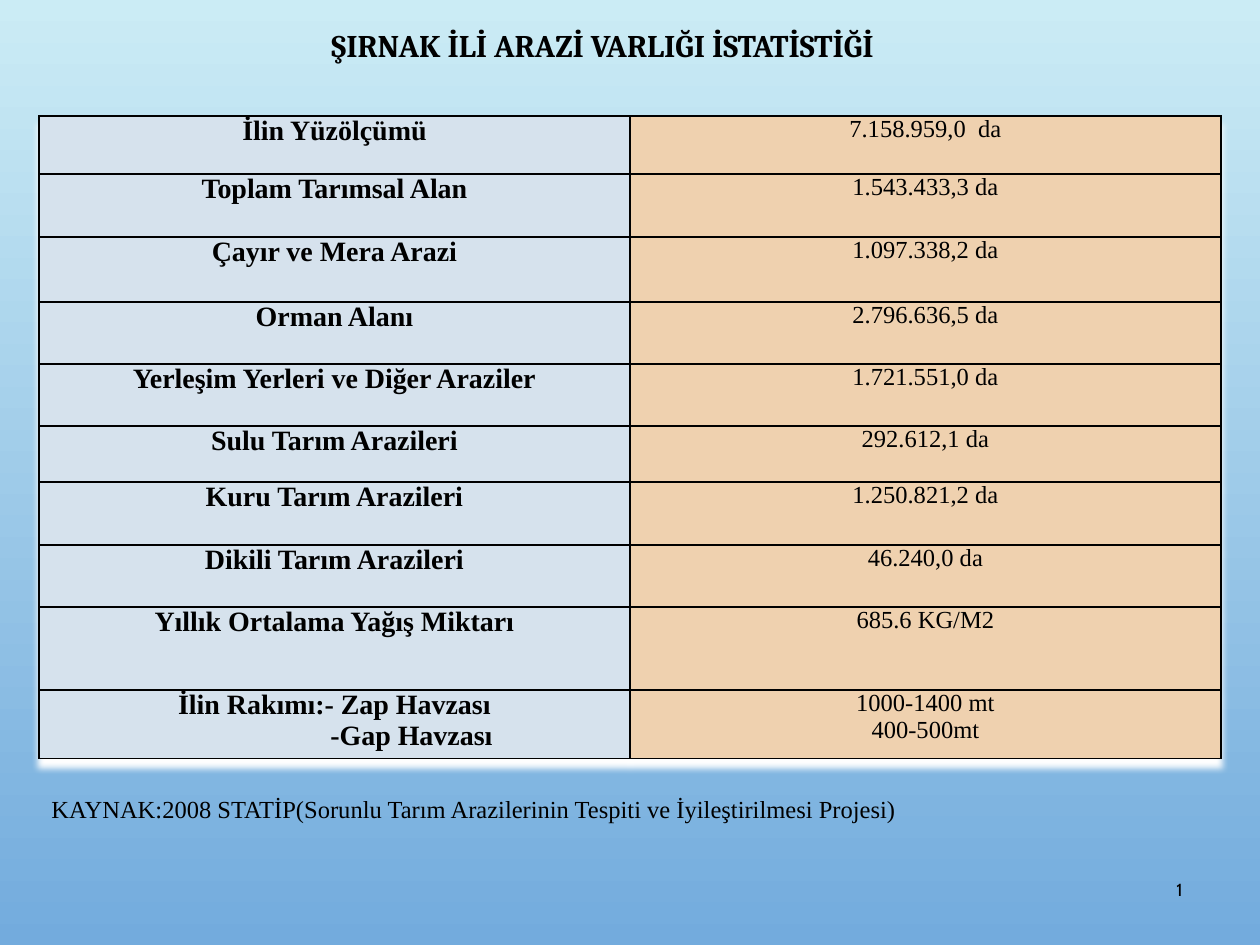
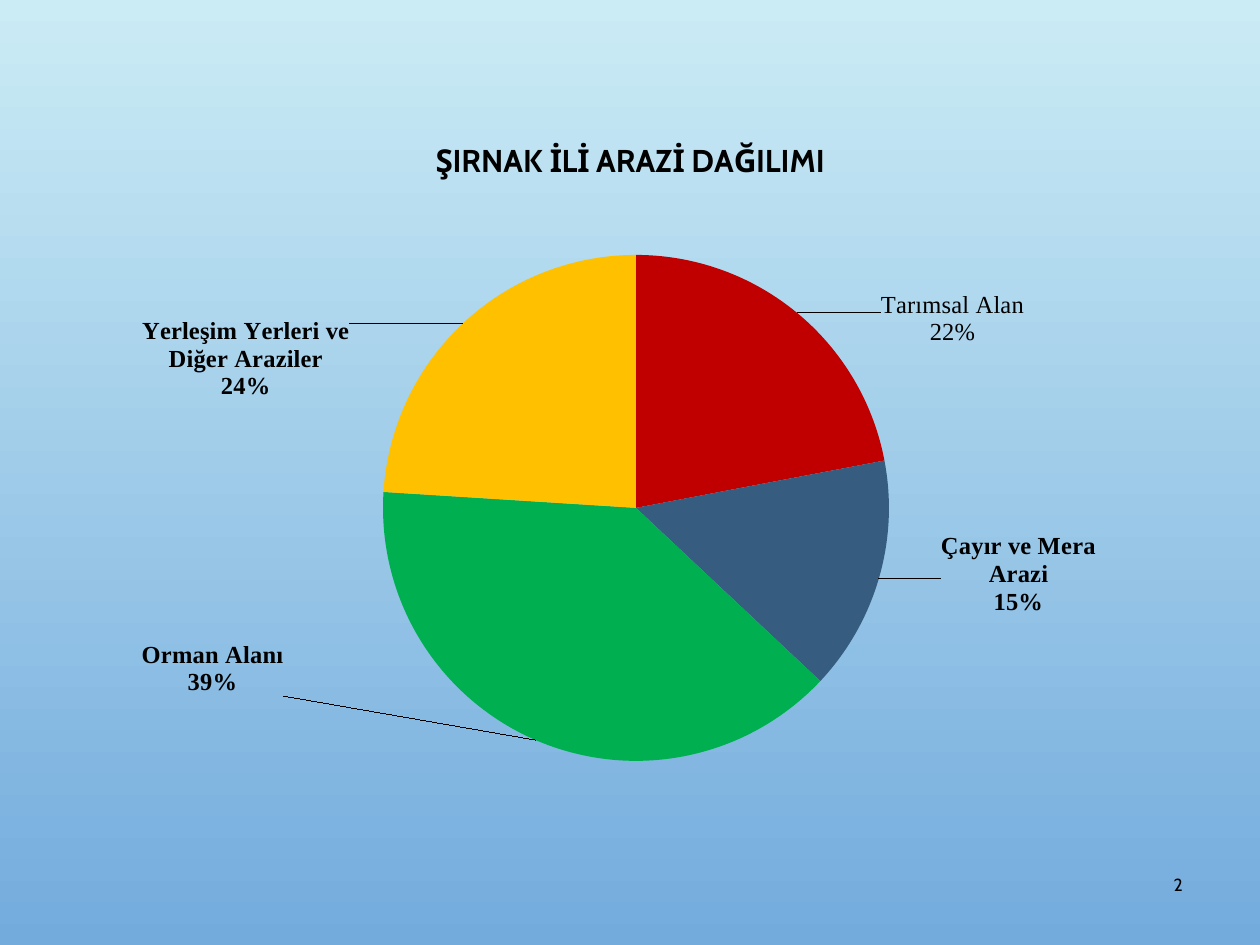
from dataclasses import dataclass

from pptx import Presentation
from pptx.chart.data import CategoryChartData
from pptx.dml.color import RGBColor
from pptx.enum.chart import XL_CHART_TYPE, XL_LABEL_POSITION
from pptx.enum.text import MSO_ANCHOR, PP_ALIGN
from pptx.oxml import parse_xml
from pptx.oxml.ns import qn
from pptx.util import Emu, Pt

A_NS = 'xmlns:a="http://schemas.openxmlformats.org/drawingml/2006/main"'
C_NS = 'xmlns:c="http://schemas.openxmlformats.org/drawingml/2006/chart"'
EMU_PER_PX = 914400 / 126


@dataclass(frozen=True)
class Theme:
    ink: str = "000000"
    glow: str = "FFFFFF"
    sky: tuple = ("CBECF5", "73ABDD")
    label_fill: str = "D6E2ED"
    value_fill: str = "EFD1AF"
    slices: tuple = ("C00000", "365D7F", "00B050", "FFC000")
    heading: str = "Cambria"
    body: str = "Times New Roman"
    plain: str = "Cabin"
    title_size: int = 18
    label_size: int = 16
    body_size: int = 14
    number_size: int = 10


T = Theme()
HEADING = {"name": T.heading, "size": Pt(T.title_size), "bold": True}
ROW_LABEL = {"name": T.body, "size": Pt(T.label_size), "bold": True}
BODY = {"name": T.body, "size": Pt(T.body_size), "bold": False}
CHART_LABEL = {**BODY, "bold": True}
CHART_TITLE = {"name": T.plain, "size": Pt(T.title_size), "bold": True}
PAGE_NUMBER = {"name": T.plain, "size": Pt(T.number_size)}

LAND_ROWS = [
    (58, "İlin Yüzölçümü", "7.158.959,0  da"),
    (63, "Toplam Tarımsal Alan", "1.543.433,3 da"),
    (65, "Çayır ve Mera Arazi", "1.097.338,2 da"),
    (62, "Orman Alanı", "2.796.636,5 da"),
    (62, "Yerleşim Yerleri ve Diğer Araziler", "1.721.551,0 da"),
    (56, "Sulu Tarım Arazileri", "292.612,1 da"),
    (63, "Kuru Tarım Arazileri", "1.250.821,2 da"),
    (62, "Dikili Tarım Arazileri", "46.240,0 da"),
    (83, "Yıllık Ortalama Yağış Miktarı", "685.6 KG/M2"),
    (69, "İlin Rakımı:- Zap Havzası\n-Gap Havzası", "1000-1400 mt\n400-500mt"),
]
LAND_SHARES = [
    ("Toplam Tarımsal Alan", 22, (79, 39)),
    ("Çayır ve Mera Arazi", 15, (55, -48)),
    ("Orman Alanı", 39, (-249, -106)),
    ("Yerleşim Yerleri ve Diğer Araziler", 24, (-108, 82)),
]


def px(n):
    return Emu(round(n * EMU_PER_PX))


def style(font, formats):
    for key, value in formats.items():
        setattr(font, key, value)
    font.color.rgb = RGBColor.from_string(T.ink)


def write(tf, text, formats, align):
    for i, line in enumerate(text.split("\n")):
        p = tf.paragraphs[0] if i == 0 else tf.add_paragraph()
        p.alignment = align
        r = p.add_run()
        r.text = line
        style(r.font, formats)


def paint_background(prs):
    fill = prs.slide_master.background.fill
    fill.gradient()
    fill.gradient_angle = 270
    for stop, color in zip(fill.gradient_stops, T.sky):
        stop.color.rgb = RGBColor.from_string(color)


def add_text(s, box, text, formats, align=PP_ALIGN.LEFT, anchor=MSO_ANCHOR.TOP):
    tf = s.shapes.add_textbox(*map(px, box)).text_frame
    tf.word_wrap = True
    tf.vertical_anchor = anchor
    write(tf, text, formats, align)
    return tf


def add_page_number(s, box, number):
    tf = add_text(s, box, str(number), PAGE_NUMBER, PP_ALIGN.RIGHT, MSO_ANCHOR.MIDDLE)
    r = tf.paragraphs[0].runs[0]._r
    fld = parse_xml(f'<a:fld {A_NS} id="{{B6F15528-21DE-4FAA-801E-634DDDAF4B2B}}" type="slidenum"/>')
    r.addprevious(fld)
    for child in list(r):
        fld.append(child)
    r.getparent().remove(r)


def border_cell(cell):
    tcPr = cell._tc.get_or_add_tcPr()
    for i, side in enumerate(("lnL", "lnR", "lnT", "lnB")):
        tcPr.insert(i, parse_xml(
            f'<a:{side} {A_NS} w="12700"><a:solidFill><a:srgbClr val="{T.ink}"/>'
            f'</a:solidFill></a:{side}>'))


def add_glow(tbl):
    tbl._tbl.tblPr.insert(0, parse_xml(
        f'<a:effectLst {A_NS}><a:outerShdw blurRad="50800" dist="63500" dir="5400000" '
        f'rotWithShape="0"><a:srgbClr val="{T.glow}"/></a:outerShdw></a:effectLst>'))


def add_land_table(s, left, top, col_width):
    height = sum(row[0] for row in LAND_ROWS)
    box = map(px, (left, top, 2 * col_width, height))
    tbl = s.shapes.add_table(len(LAND_ROWS), 2, *box).table
    tbl.first_row = tbl.horz_banding = False
    add_glow(tbl)
    looks = ((T.label_fill, ROW_LABEL), (T.value_fill, BODY))
    margins = {"margin_left": px(9), "margin_right": px(9), "margin_top": 0, "margin_bottom": 0}
    for i, (row_height, *texts) in enumerate(LAND_ROWS):
        tbl.rows[i].height = px(row_height)
        for j, (text, (color, formats)) in enumerate(zip(texts, looks)):
            cell = tbl.cell(i, j)
            for key, value in margins.items():
                setattr(cell, key, value)
            cell.fill.solid()
            cell.fill.fore_color.rgb = RGBColor.from_string(color)
            border_cell(cell)
            write(cell.text_frame, text, formats, PP_ALIGN.CENTER)
    basin = tbl.cell(len(LAND_ROWS) - 1, 0).text_frame.paragraphs[1]
    basin._p.get_or_add_pPr().set("marL", str(px(154)))


def chart_layout(values, target=""):
    modes = '<c:xMode val="edge"/><c:yMode val="edge"/>' if target != "label" else ""
    inner = '<c:layoutTarget val="inner"/>' if target == "plot" else ""
    parts = "".join(f'<c:{k} val="{v:.4f}"/>' for k, v in zip("xywh", values))
    return parse_xml(f'<c:layout {C_NS}><c:manualLayout>{inner}{modes}{parts}'
                     f'</c:manualLayout></c:layout>')


def set_layout(parent, index, layout):
    for old in parent.findall(qn("c:layout")):
        parent.remove(old)
    parent.insert(index, layout)


def show_name_and_percent(labels):
    for tag, on in (("showVal", 0), ("showCatName", 1), ("showPercent", 1)):
        labels.find(qn(f"c:{tag}")).set("val", str(on))
    labels.find(qn("c:showBubbleSize")).addnext(
        parse_xml(f'<c:separator {C_NS}>\n</c:separator>'))


def add_share_pie(s, box, pie_box, title_at, title):
    left, top, width, height = box
    data = CategoryChartData()
    data.categories = [name for name, _, _ in LAND_SHARES]
    data.add_series("Series 1", [share for _, share, _ in LAND_SHARES])
    chart = s.shapes.add_chart(XL_CHART_TYPE.PIE, *map(px, box), data).chart
    style(chart.font, PAGE_NUMBER)
    chart.has_legend = False
    chart.has_title = True
    write(chart.chart_title.text_frame, title, CHART_TITLE, PP_ALIGN.CENTER)
    x, y = title_at
    set_layout(chart.chart_title._element, 1,
               chart_layout(((x - left) / width, (y - top) / height)))
    x, y, w, h = pie_box
    set_layout(chart._chartSpace.chart.plotArea, 0, chart_layout(
        ((x - left) / width, (y - top) / height, w / width, h / height), "plot"))

    chart.plots[0].vary_by_categories = True
    ser = chart.plots[0].series[0]
    style(ser.data_labels.font, CHART_LABEL)
    for i, color in enumerate(T.slices):
        point = ser.points[i]
        point.format.fill.solid()
        point.format.fill.fore_color.rgb = RGBColor.from_string(color)
        label = point.data_label
        if i == 0:
            write(label.text_frame, "Tarımsal Alan\n22%", BODY, PP_ALIGN.CENTER)
        else:
            style(label.font, CHART_LABEL)
        label.position = XL_LABEL_POSITION.OUTSIDE_END
    dLbls = ser._element.find(qn("c:dLbls"))
    show_name_and_percent(dLbls)
    for dLbl, (_, _, (dx, dy)) in zip(dLbls.findall(qn("c:dLbl")), LAND_SHARES):
        show_name_and_percent(dLbl)
        set_layout(dLbl, 1, chart_layout((dx / width, dy / height), "label"))


def main():
    prs = Presentation()
    prs.slide_width, prs.slide_height = px(1260), px(945)
    paint_background(prs)
    blank = prs.slide_layouts[6]

    s = prs.slides.add_slide(blank)
    add_page_number(s, (1087, 850, 108, 79), 1)
    add_land_table(s, 39, 116, 591)
    add_text(s, (319, 20, 621, 50), "ŞIRNAK İLİ ARAZİ VARLIĞI İSTATİSTİĞİ", HEADING)
    add_text(s, (39, 788, 1014, 43),
             "KAYNAK:2008 STATİP(Sorunlu Tarım Arazilerinin Tespiti ve İyileştirilmesi Projesi)", BODY)

    s = prs.slides.add_slide(blank)
    add_page_number(s, (1116, 850, 79, 69), 2)
    add_share_pie(s, (84, 116, 1091, 714), (383, 255, 506, 506), (430, 133),
                  "ŞIRNAK İLİ ARAZİ DAĞILIMI")
    prs.save("out.pptx")


if __name__ == "__main__":
    main()
